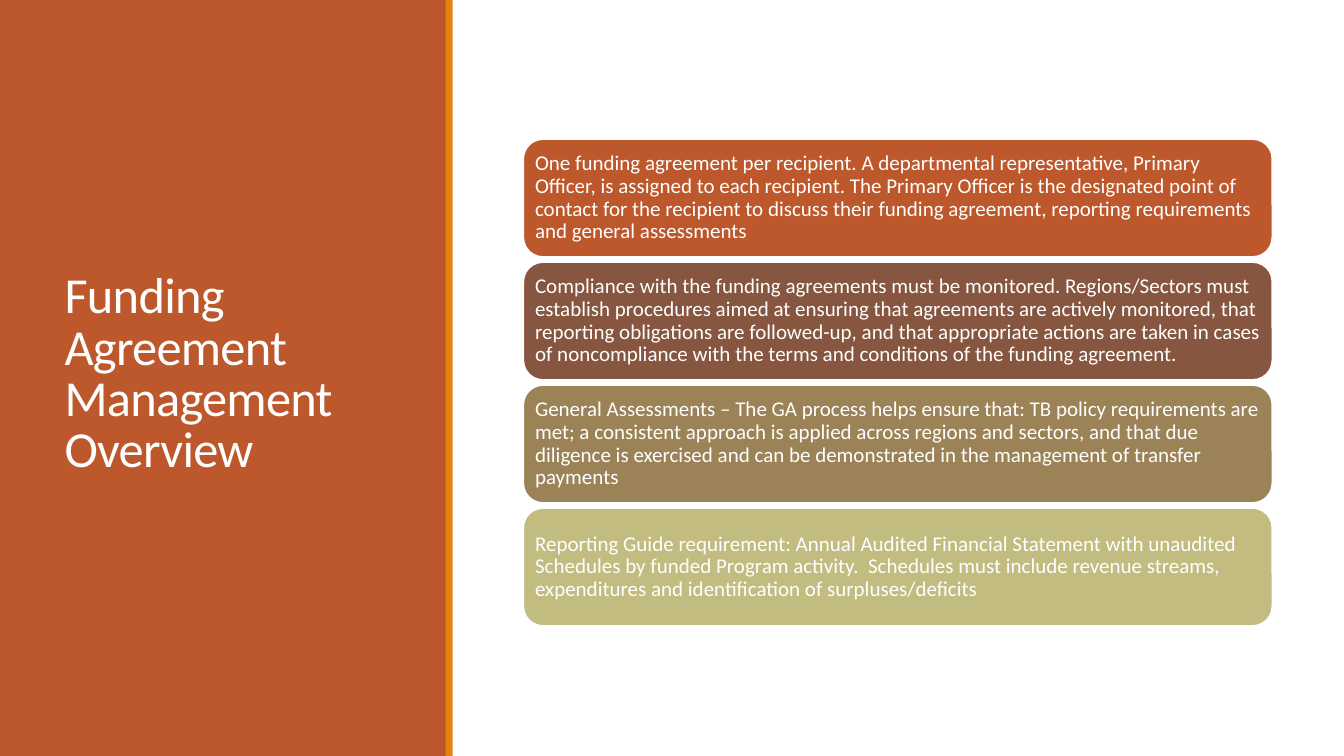
from pptx import Presentation
from pptx.dml.color import RGBColor
from pptx.enum.shapes import MSO_SHAPE as SHAPE
from pptx.enum.text import MSO_ANCHOR as ANCHOR, MSO_AUTO_SIZE as AUTO_SIZE, PP_ALIGN as ALIGN
from pptx.util import Inches, Pt

SLIDE_W, SLIDE_H = 13.33, 7.5
PANEL_W, STRIPE_X, STRIPE_W = 4.43, 4.42, 0.07
CARD_X, CARD_Y, CARD_W, CARD_H, CARD_PITCH = 5.19, 1.38, 7.43, 1.17, 1.22
WHITE, RUST, ORANGE = "FFFFFF", "BD582C", "E48312"

TITLE = "Funding Agreement Management Overview"
CARDS = [
    (RUST, "One funding agreement per recipient. A departmental representative, Primary Officer, "
           "is assigned to each recipient. The Primary Officer is the designated point of contact "
           "for the recipient to discuss their funding agreement, reporting requirements and "
           "general assessments"),
    ("865640", "Compliance with the funding agreements must be monitored. Regions/Sectors must "
               "establish procedures aimed at ensuring that agreements are actively monitored, "
               "that reporting obligations are followed-up, and that appropriate actions are taken "
               "in cases of noncompliance with the terms and conditions of the funding agreement."),
    ("9B8357", "General Assessments – The GA process helps ensure that: TB policy requirements are "
               "met; a consistent approach is applied across regions and sectors, and that due "
               "diligence is exercised and can be demonstrated in the management of transfer "
               "payments"),
    ("C2BC80", "Reporting Guide requirement: Annual Audited Financial Statement with unaudited "
               "Schedules by funded Program activity.  Schedules must include revenue streams, "
               "expenditures and identification of surpluses/deficits"),
]


def rgb(value):
    return RGBColor.from_string(value)


def add_block(s, x, y, w, h, fill, kind=SHAPE.RECTANGLE, line=None):
    sp = s.shapes.add_shape(kind, Inches(x), Inches(y), Inches(w), Inches(h))
    sp.shadow.inherit = False
    sp.fill.solid()
    sp.fill.fore_color.rgb = rgb(fill)
    if line:
        sp.line.color.rgb = rgb(line)
        sp.line.width = Pt(1.25)
    else:
        sp.line.fill.background()
    return sp


def set_text(sp, text, size, line_spacing, inset=None, tracking=None):
    """Fill a shape with left-aligned, vertically centred white text; tracking is in points."""
    tf = sp.text_frame
    tf.word_wrap = True
    tf.auto_size = AUTO_SIZE.NONE
    tf.vertical_anchor = ANCHOR.MIDDLE
    if inset is not None:
        tf.margin_left = tf.margin_right = tf.margin_top = tf.margin_bottom = Inches(inset)
    p = tf.paragraphs[0]
    p.alignment = ALIGN.LEFT
    p.line_spacing = line_spacing
    r = p.add_run()
    r.text = text
    r.font.name = "Calibri"
    r.font.size = Pt(size)
    r.font.color.rgb = rgb(WHITE)
    if tracking is not None:
        r._r.get_or_add_rPr().set("spc", str(round(tracking * 100)))


def add_title(s):
    """Format the title placeholder and bring it in front of the side panel."""
    sp = s.shapes.title
    sp.left, sp.top, sp.width, sp.height = map(Inches, (0.54, 0.57, 3.37, 6.31))
    set_text(sp, TITLE, 36, 0.85, tracking=-0.5)
    s.shapes._spTree.append(sp._element)


def main():
    prs = Presentation()
    prs.slide_width, prs.slide_height = Inches(SLIDE_W), Inches(SLIDE_H)
    s = prs.slides.add_slide(prs.slide_layouts[5])
    add_block(s, 0, 0, PANEL_W, SLIDE_H, RUST)
    add_title(s)
    add_block(s, STRIPE_X, 0, STRIPE_W, SLIDE_H, ORANGE)
    for i, (fill, text) in enumerate(CARDS):
        card = add_block(s, CARD_X, CARD_Y + i * CARD_PITCH, CARD_W, CARD_H, fill,
                         SHAPE.ROUNDED_RECTANGLE, line=WHITE)
        set_text(card, text, 15, 0.9, inset=0.06)
    prs.save("out.pptx")


if __name__ == "__main__":
    main()
